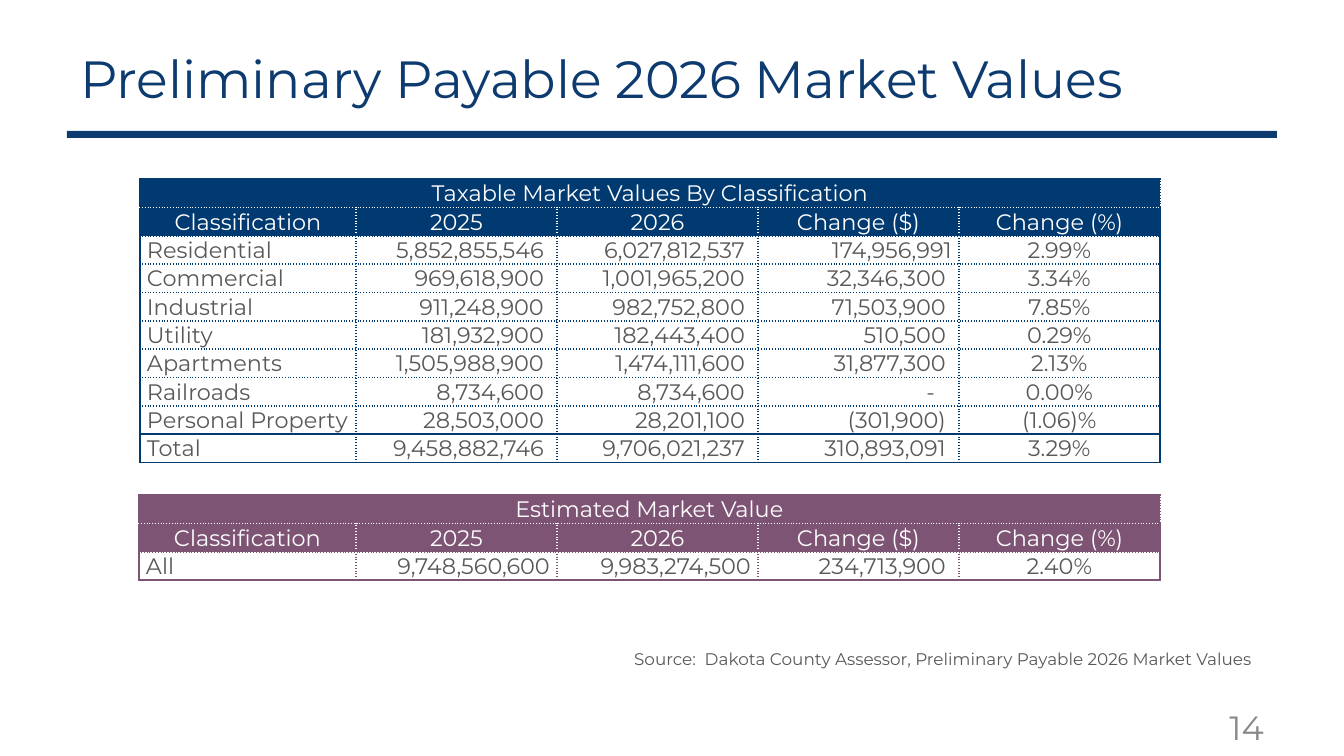
import pptx
import pptx.dml.color
import pptx.enum.shapes
import pptx.enum.text
import pptx.oxml
import pptx.oxml.ns
import pptx.util

PX = 9144000 / 1344
FONT = "Montserrat"
NAVY = pptx.dml.color.RGBColor(0x0D, 0x3B, 0x70)
BLUE = pptx.dml.color.RGBColor(0x00, 0x3A, 0x70)
PLUM = pptx.dml.color.RGBColor(0x7E, 0x54, 0x75)
DARK_GRAY = pptx.dml.color.RGBColor(0x59, 0x59, 0x59)
LIGHT_GRAY = pptx.dml.color.RGBColor(0x89, 0x89, 0x89)
WHITE = pptx.dml.color.RGBColor(0xFF, 0xFF, 0xFF)
LEFT = pptx.enum.text.PP_ALIGN.LEFT
CENTER = pptx.enum.text.PP_ALIGN.CENTER
RIGHT = pptx.enum.text.PP_ALIGN.RIGHT

HEADINGS = ["Classification", "2025", "2026", "Change ($)", "Change (%)"]
TAXABLE_ROWS = [
    ["Residential", "5,852,855,546", "6,027,812,537", "174,956,991", "2.99%"],
    ["Commercial", "969,618,900", "1,001,965,200", "32,346,300", "3.34%"],
    ["Industrial", "911,248,900", "982,752,800", "71,503,900", "7.85%"],
    ["Utility", "181,932,900", "182,443,400", "510,500", "0.29%"],
    ["Apartments", "1,505,988,900", "1,474,111,600", "31,877,300", "2.13%"],
    ["Railroads", "8,734,600", "8,734,600", "-", "0.00%"],
    ["Personal Property", "28,503,000", "28,201,100", "(301,900)", "(1.06)%"],
    ["Total", "9,458,882,746", "9,706,021,237", "310,893,091", "3.29%"],
]
ESTIMATED_ROWS = [["All", "9,748,560,600", "9,983,274,500", "234,713,900", "2.40%"]]
NUMBER_INSET = 13
SPECIAL_INSETS = {"174,956,991": 7, "9,748,560,600": 7, "9,983,274,500": 7, "-": 24}


def px(length):
    """Turn a length in px into EMU."""
    return pptx.util.Emu(round(length * PX))


def apply_format(target, values):
    """Set each named attribute of the target."""
    for name, value in values.items():
        setattr(target, name, value)


def write_text(frame, text, size, color, alignment=LEFT):
    """Write one formatted paragraph into a text frame."""
    paragraph = frame.paragraphs[0]
    paragraph.alignment = alignment
    run = paragraph.add_run()
    run.text = text
    apply_format(run.font, {"name": FONT, "size": pptx.util.Pt(size), "bold": False})
    run.font.color.rgb = color


def add_title(slide, box, text):
    """Move and fill the title placeholder."""
    title = slide.shapes.title
    apply_format(title, dict(zip(("left", "top", "width", "height"), map(px, box))))
    apply_format(title.text_frame, {
        "word_wrap": True,
        "auto_size": pptx.enum.text.MSO_AUTO_SIZE.NONE,
        "vertical_anchor": pptx.enum.text.MSO_ANCHOR.MIDDLE,
    })
    write_text(title.text_frame, text, 28, NAVY)


def add_title_rule(slide, box):
    """Draw the bar under the title."""
    bar = slide.shapes.add_shape(pptx.enum.shapes.MSO_SHAPE.RECTANGLE, *map(px, box))
    bar.shadow.inherit = False
    bar.fill.solid()
    bar.fill.fore_color.rgb = NAVY
    bar.line.fill.background()


def add_label(slide, box, text, size, color, alignment=LEFT):
    """Add a line of text in its own box."""
    label = slide.shapes.add_textbox(*map(px, box))
    label.text_frame.word_wrap = True
    write_text(label.text_frame, text, size, color, alignment)


def add_border(cell, side, color, dash):
    """Add one border line to a cell."""
    border = pptx.oxml.parse_xml(
        f'<a:ln{side} {pptx.oxml.ns.nsdecls("a")} w="12700"><a:solidFill>'
        f'<a:srgbClr val="{color}"/></a:solidFill><a:prstDash val="{dash}"/></a:ln{side}>'
    )
    cell._tc.get_or_add_tcPr().append(border)


def format_cell(cell, text, column, is_header, accent):
    """Fill one cell and set its text, insets and alignment."""
    left, right, alignment = 1, 1, CENTER
    if not is_header and column == 0:
        left, right, alignment = 7, 7, LEFT
    elif not is_header and column < len(HEADINGS) - 1:
        right, alignment = SPECIAL_INSETS.get(text, NUMBER_INSET), RIGHT
    apply_format(cell, {
        "margin_left": px(left),
        "margin_top": px(1),
        "margin_right": px(right),
        "margin_bottom": px(0),
        "vertical_anchor": pptx.enum.text.MSO_ANCHOR.BOTTOM,
    })
    if is_header:
        cell.fill.solid()
        cell.fill.fore_color.rgb = accent
    else:
        cell.fill.background()
    write_text(cell.text_frame, text, 12, WHITE if is_header else DARK_GRAY, alignment)


def add_value_table(slide, box, heading, body, accent):
    """Add a table with a merged heading, column headings and value rows."""
    rows = [[heading] + [""] * (len(HEADINGS) - 1), HEADINGS] + body
    row_count, column_count = len(rows), len(HEADINGS)
    table = slide.shapes.add_table(row_count, column_count, *map(px, box)).table
    apply_format(table, {"first_row": False, "horz_banding": False})
    value_width = 201
    name_width = box[2] - value_width * (column_count - 1)
    for index, column in enumerate(table.columns):
        column.width = px(value_width if index else name_width)
    for row in table.rows:
        row.height = px(box[3] // row_count)

    solid_edges = {0, row_count}
    if body[-1][0] == "Total":
        solid_edges.add(row_count - 1)

    def horizontal(edge):
        """Give the colour and dash of a line between rows."""
        return WHITE if edge == 1 else accent, "solid" if edge in solid_edges else "sysDot"

    def vertical(edge, row):
        """Give the colour and dash of a line between columns."""
        if edge in (0, column_count):
            return accent, "solid"
        return WHITE if row == 1 else accent, "sysDot"

    table.cell(0, 0).merge(table.cell(0, column_count - 1))
    for row, texts in enumerate(rows):
        for column, text in enumerate(texts):
            cell = table.cell(row, column)
            add_border(cell, "L", *vertical(column, row))
            add_border(cell, "R", *vertical(column + 1, row))
            add_border(cell, "T", *horizontal(row))
            add_border(cell, "B", *horizontal(row + 1))
            format_cell(cell, text, column, row < 2, accent)


def main():
    """Build and save the market values slide."""
    presentation = pptx.Presentation()
    apply_format(presentation, {"slide_width": px(1344), "slide_height": px(756)})
    slide = presentation.slides.add_slide(presentation.slide_layouts[5])
    add_title_rule(slide, (67, 131, 1210, 7))
    add_title(slide, (67, 43, 1208, 70), "Preliminary Payable 2026 Market Values")
    add_value_table(slide, (140, 179, 1020, 280),
                    "Taxable Market Values By Classification", TAXABLE_ROWS, BLUE)
    add_value_table(slide, (139, 495, 1021, 84),
                    "Estimated Market Value", ESTIMATED_ROWS, PLUM)
    add_label(slide, (621, 642, 656, 34),
              "Source:  Dakota County Assessor, Preliminary Payable 2026 Market Values",
              9, DARK_GRAY)
    add_label(slide, (1208, 700, 69, 40), "14", 18, LIGHT_GRAY, RIGHT)
    presentation.save("out.pptx")


if __name__ == "__main__":
    main()
